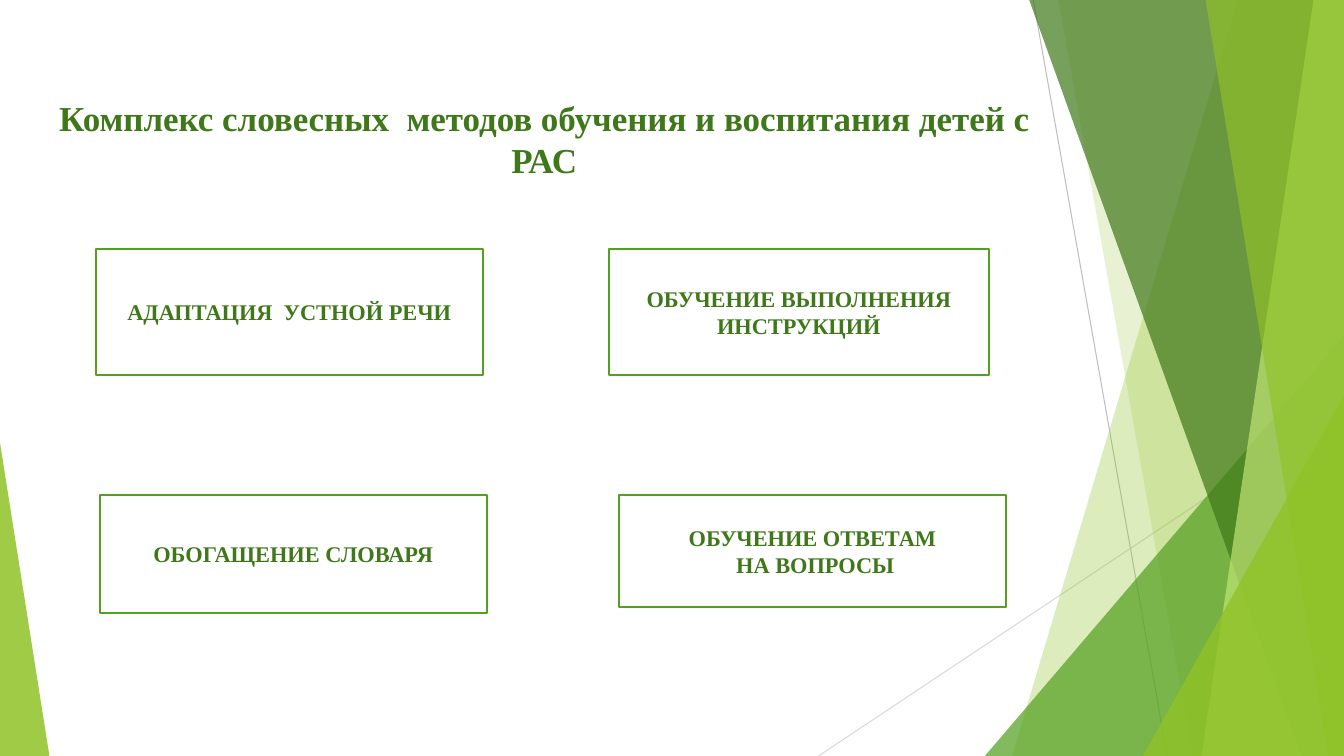
from lxml import etree
from pptx import Presentation
from pptx.dml.color import RGBColor
from pptx.enum.shapes import MSO_CONNECTOR, MSO_SHAPE
from pptx.enum.text import MSO_ANCHOR, PP_ALIGN
from pptx.oxml.ns import qn
from pptx.util import Inches, Pt

WIDE, HIGH = Inches(13.33), Inches(7.5)
FONT = "Times New Roman"
WHITE = RGBColor(0xFF, 0xFF, 0xFF)
DARK = RGBColor(0x3F, 0x78, 0x19)
GREEN = RGBColor(0x54, 0xA0, 0x21)
LIME = RGBColor(0x90, 0xC2, 0x26)
PALE = RGBColor(0xC0, 0xE4, 0x74)
GREY = RGBColor(0xBF, 0xBF, 0xBF)
MIST = RGBColor(0xD9, 0xD9, 0xD9)
LINE = MSO_CONNECTOR.STRAIGHT
RECT, WEDGE = MSO_SHAPE.RECTANGLE, MSO_SHAPE.ISOSCELES_TRIANGLE
TOP, MIDDLE = MSO_ANCHOR.TOP, MSO_ANCHOR.MIDDLE
CENTER = PP_ALIGN.CENTER

TITLE = "Комплекс словесных  методов обучения и воспитания детей с РАС"
BOXES = [
    ((7.13, 32.93, 28.8, 16.67), "АДАПТАЦИЯ  УСТНОЙ РЕЧИ"),
    ((45.3, 32.93, 28.28, 16.67), "ОБУЧЕНИЕ ВЫПОЛНЕНИЯ ИНСТРУКЦИЙ"),
    ((7.43, 65.47, 28.8, 15.6), "ОБОГАЩЕНИЕ СЛОВАРЯ"),
    ((46.05, 65.47, 28.8, 14.8), "ОБУЧЕНИЕ ОТВЕТАМ\n НА ВОПРОСЫ"),
]


def place(x, y):
    """Turn percentages of the slide's width and height into lengths."""
    return round(WIDE * x / 100), round(HIGH * y / 100)


def tint(shape, color, alpha):
    """Give a shape a see-through fill with neither line nor shadow."""
    shape.shadow.inherit = False
    shape.line.fill.background()
    shape.fill.solid()
    shape.fill.fore_color.rgb = color
    fill = shape.element.spPr.find(qn("a:solidFill"))
    etree.SubElement(fill[0], qn("a:alpha")).set("val", str(alpha * 1000))


def rule(shapes, start, end, color):
    """Draw a thin straight line."""
    line = shapes.add_connector(LINE, *place(*start), *place(*end))
    line.line.color.rgb = color
    line.line.width = Pt(0.75)
    etree.SubElement(line.element.spPr, qn("a:effectLst"))


def sheet(shapes, top, base, color, alpha):
    """Fill from a slanted left edge to the right side of the slide."""
    pen = shapes.build_freeform(*place(top, 0))
    pen.add_line_segments([place(100, 0), place(100, 100), place(base, 100)])
    tint(pen.convert_to_shape(), color, alpha)


def wedge(shapes, left, top, width, peak, color, alpha):
    """Stand a right triangle on the bottom edge of the slide."""
    shape = shapes.add_shape(WEDGE, *place(left, top), *place(width, 100 - top))
    shape.adjustments[0] = peak
    tint(shape, color, alpha)


def write(frame, text, size, anchor):
    """Set centred bold text in a frame."""
    frame.text = text
    frame.word_wrap = True
    frame.vertical_anchor = anchor
    for para in frame.paragraphs:
        para.alignment = CENTER
        para.font.name = FONT
        para.font.size = Pt(size)
        para.font.bold = True
        para.font.color.rgb = DARK


def head(shape):
    """Place and format the slide's title."""
    shape.left, shape.top = place(2.55, 12.13)
    shape.width, shape.height = place(75.9, 22.27)
    write(shape.text_frame, TITLE, 25, TOP)
    shape.text_frame.paragraphs[0].line_spacing = 1.0


def box(shapes, area, text):
    """Draw a framed box for one method."""
    shape = shapes.add_shape(RECT, *place(*area[:2]), *place(*area[2:]))
    shape.shadow.inherit = False
    shape.fill.solid()
    shape.fill.fore_color.rgb = WHITE
    shape.line.color.rgb = GREEN
    shape.line.width = Pt(1.5)
    write(shape.text_frame, text, 16, MIDDLE)


def facets(shapes):
    """Layer the green facets from back to front."""
    rule(shapes, (76.88, 0), (86.85, 100), GREY)
    rule(shapes, (100, 53.73), (60.9, 100), MIST)
    sheet(shapes, 92.1, 75.3, LIME, 30)
    sheet(shapes, 78.75, 88.73, LIME, 20)
    wedge(shapes, 73.28, 44.4, 26.72, 1, GREEN, 72)
    sheet(shapes, 76.58, 96.83, DARK, 70)
    sheet(shapes, 97.73, 89.4, PALE, 70)
    sheet(shapes, 89.7, 98.85, LIME, 65)
    wedge(shapes, 85.05, 52.4, 14.95, 1, LIME, 80)
    wedge(shapes, 0, 58.53, 3.68, 0, LIME, 85)


def main():
    """Build and save the slide."""
    deck = Presentation()
    deck.slide_width, deck.slide_height = WIDE, HIGH
    slide = deck.slides.add_slide(deck.slide_layouts[5])
    facets(slide.shapes)
    head(slide.shapes.title)
    for area, text in BOXES:
        box(slide.shapes, area, text)
    deck.save("out.pptx")


if __name__ == "__main__":
    main()
